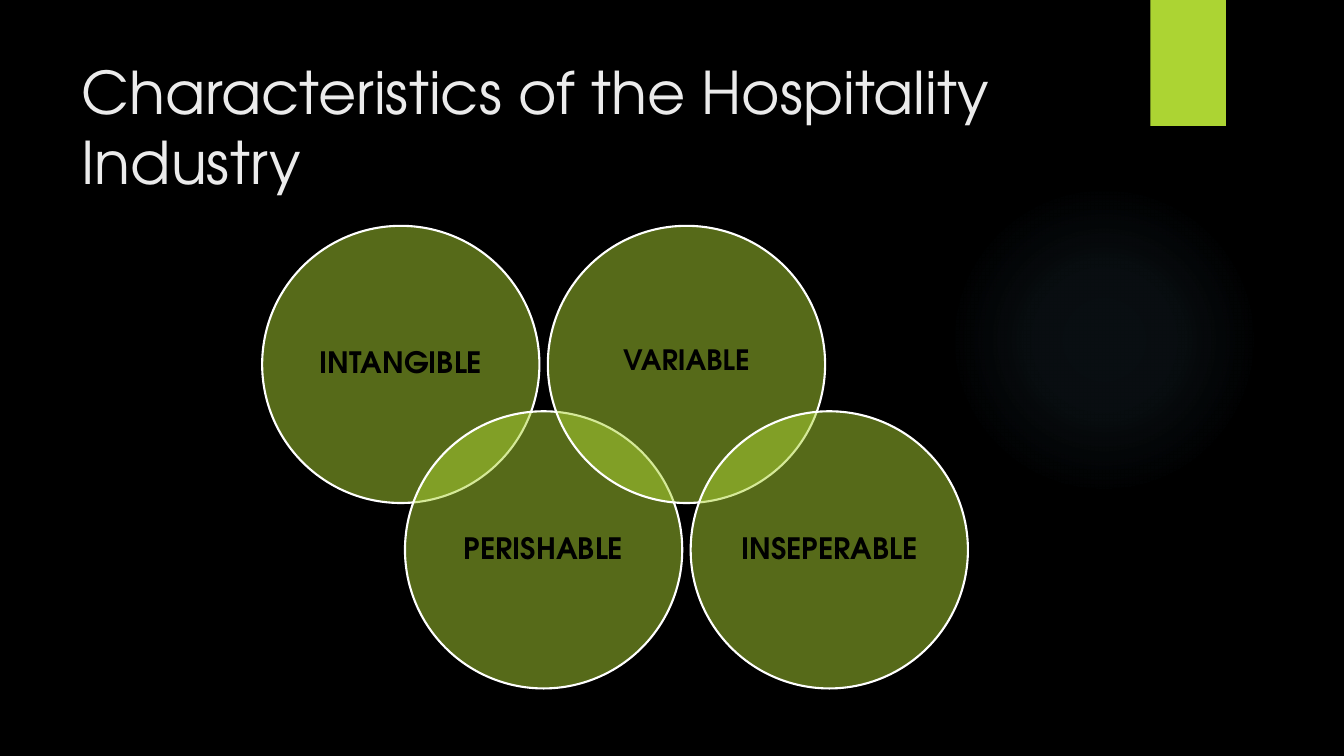
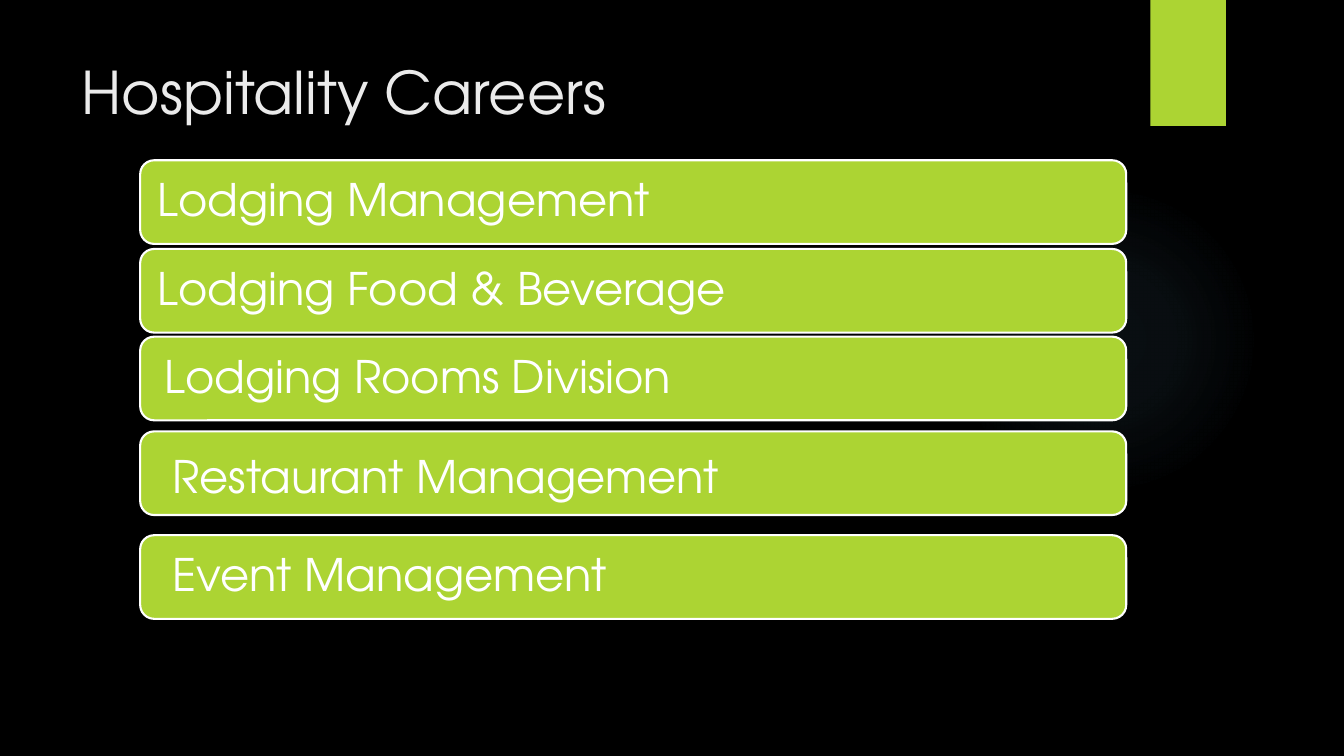
from dataclasses import dataclass

from lxml import etree
from pptx import Presentation
from pptx.dml.color import RGBColor
from pptx.enum.shapes import MSO_SHAPE
from pptx.enum.text import MSO_ANCHOR, MSO_AUTO_SIZE, PP_ALIGN
from pptx.oxml import parse_xml
from pptx.oxml.ns import nsdecls, qn
from pptx.util import Inches, Pt


@dataclass(frozen=True)
class Theme:
    font: str = "TeX Gyre Adventor"
    black: str = "000000"
    white: str = "FFFFFF"
    pale: str = "EBEBEB"
    lime: str = "ACD433"
    glow: str = "7AC4F0"
    title: float = 42
    bar: float = 32
    ring: float = 21
    edge: float = 1.5


THEME = Theme()

# Label, size, downward shift of the text
RINGS = [
    ("INTANGIBLE", THEME.ring, 0),
    ("PERISHABLE", THEME.ring, 0),
    ("VARIABLE", THEME.ring - 1, -0.03),
    ("INSEPERABLE", THEME.ring, 0),
]

# Label, top within the list, left inset, downward shift of the text
BARS = [
    ("Lodging Management", 0, 0.13, 0),
    ("Lodging Food & Beverage", 0.88, 0.13, 0),
    ("Lodging Rooms Division", 1.75, 0.2, 0.01),
    ("Restaurant Management", 2.69, 0.28, 0.06),
    ("Event Management", 3.72, 0.28, 0),
]


def style(para, size, color, bold=False):
    for run in para.runs:
        run.font.name = THEME.font
        run.font.size = Pt(size)
        run.font.bold = bold
        run.font.color.rgb = RGBColor.from_string(color)


def add_form(slide, kind, box, fill, line=None):
    form = slide.shapes.add_shape(kind, *map(Inches, box))
    form.shadow.inherit = False
    form.fill.solid()
    form.fill.fore_color.rgb = RGBColor.from_string(fill)
    if line:
        form.line.color.rgb = RGBColor.from_string(line)
        form.line.width = Pt(THEME.edge)
    else:
        form.line.fill.background()
    return form


def add_label(form, text, size, color, align, inset, drop=0, bold=False):
    frame = form.text_frame
    frame.text = text
    frame.word_wrap = True
    frame.vertical_anchor = MSO_ANCHOR.MIDDLE
    frame.margin_left, frame.margin_right = Inches(inset), Inches(0.09)
    frame.margin_top = Inches(0.09 + drop)
    frame.margin_bottom = Inches(0.09 - drop)
    para = frame.paragraphs[0]
    para.alignment = align
    para.line_spacing = 0.9
    style(para, size, color, bold)


def add_glow(slide, box):
    form = add_form(slide, MSO_SHAPE.OVAL, box, THEME.glow)
    stops = "".join(
        f'<a:gs pos="{pos}000"><a:srgbClr val="{THEME.glow}">'
        f'<a:alpha val="{alpha}000"/></a:srgbClr></a:gs>'
        for pos, alpha in ((0, 7), (36, 6), (69, 0))
    )
    grad = parse_xml(
        f'<a:gradFill {nsdecls("a")} rotWithShape="1"><a:gsLst>{stops}</a:gsLst>'
        '<a:path path="circle"><a:fillToRect l="50000" t="50000" r="50000" '
        'b="50000"/></a:path></a:gradFill>'
    )
    props = form.element.spPr
    props.replace(props.find(qn("a:solidFill")), grad)


def add_base(deck, text):
    """Start a slide with the shared glow, tab and title."""
    slide = deck.slides.add_slide(deck.slide_layouts[5])
    add_glow(slide, (9.41, 1.83, 3.08, 3.08))
    add_form(slide, MSO_SHAPE.RECTANGLE, (11.41, 0, 0.75, 1.25), THEME.lime)

    # Title
    title = slide.shapes.title
    title.left, title.top = Inches(0.71), Inches(0.5)
    title.width, title.height = Inches(10.29), Inches(1.53)
    frame = title.text_frame
    frame.text = text
    frame.word_wrap = True
    frame.auto_size = MSO_AUTO_SIZE.NONE
    frame.vertical_anchor = MSO_ANCHOR.TOP
    para = frame.paragraphs[0]
    para.alignment = PP_ALIGN.LEFT
    style(para, THEME.title, THEME.pale)
    return slide


def add_rings(slide, box):
    """Overlapping circles that alternate between top and bottom of the box."""
    left, top, width, height = box
    side = 2.75
    step = (width - side) / (len(RINGS) - 1)
    for i, (text, size, drop) in enumerate(RINGS):
        y = top + (height - side) * (i % 2)
        ring = add_form(slide, MSO_SHAPE.OVAL, (left + i * step, y, side, side),
                        THEME.lime, THEME.white)
        tint = ring.element.spPr.find(qn("a:solidFill"))[0]
        etree.SubElement(tint, qn("a:alpha"), val="50000")
        add_label(ring, text, size, THEME.black, PP_ALIGN.CENTER, 0.09, drop, True)


def add_bars(slide, box):
    """Full-width rounded bars stacked down the box."""
    left, top, width, height = box
    tall = height - BARS[-1][1]
    for text, y, inset, drop in BARS:
        bar = add_form(slide, MSO_SHAPE.ROUNDED_RECTANGLE,
                       (left, top + y, width, tall), THEME.lime, THEME.white)
        add_label(bar, text, THEME.bar, THEME.white, PP_ALIGN.LEFT, inset, drop)


def main():
    deck = Presentation()
    deck.slide_width, deck.slide_height = Inches(13.33), Inches(7.5)
    back = deck.slide_master.background.fill
    back.solid()
    back.fore_color.rgb = RGBColor.from_string(THEME.black)

    traits = add_base(deck, "Characteristics of the Hospitality Industry")
    add_rings(traits, (2.6, 2.24, 7, 4.59))

    jobs = add_base(deck, "Hospitality Careers")
    add_bars(jobs, (1.39, 1.59, 9.78, 4.55))

    deck.save("out.pptx")


if __name__ == "__main__":
    main()
